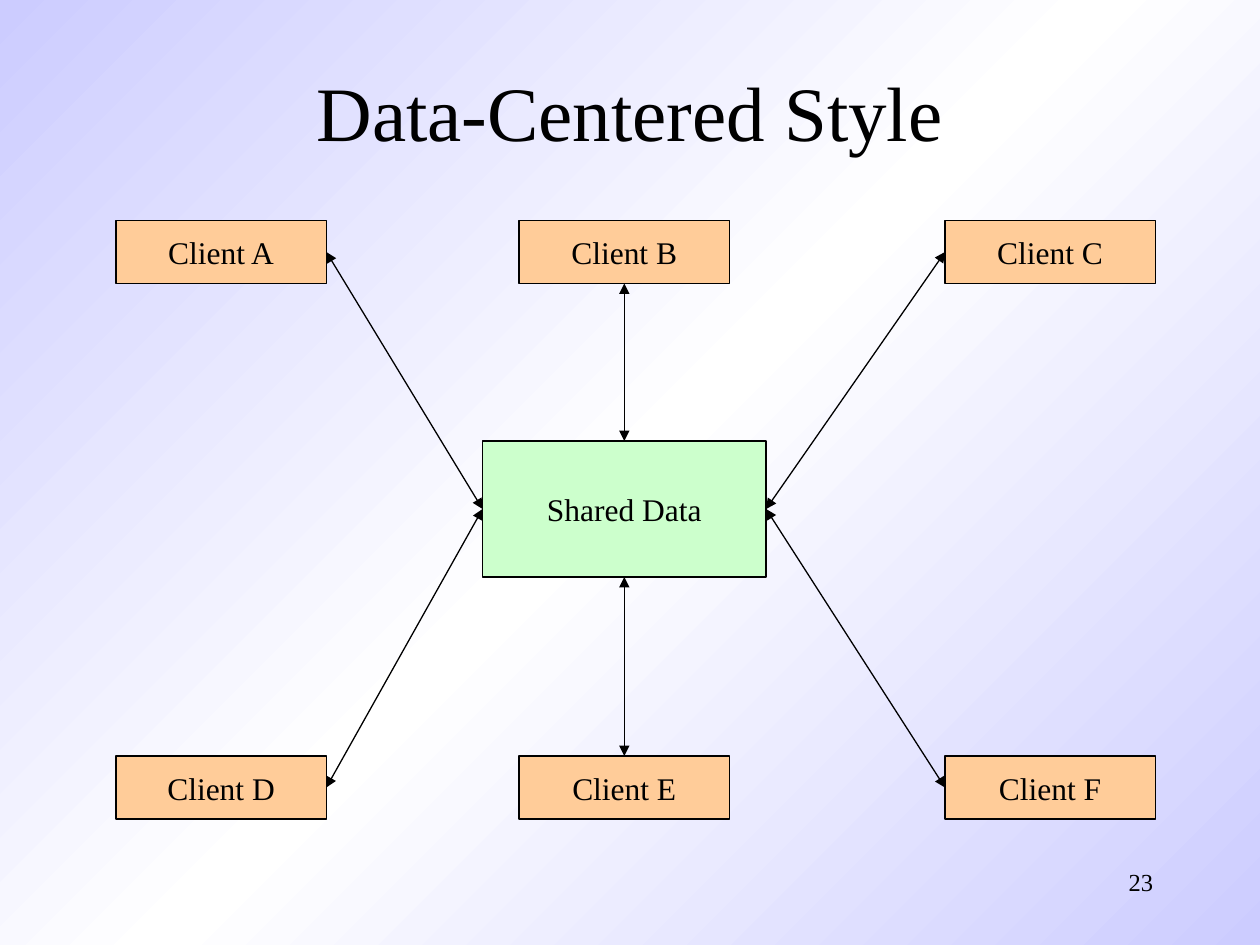
from copy import deepcopy

from lxml import etree
from pptx import Presentation
from pptx.dml.color import RGBColor
from pptx.enum import shapes, text
from pptx.oxml import ns
from pptx.util import Inches, Pt

FONT = "Times New Roman"
BLACK = RGBColor(0x00, 0x00, 0x00)
WHITE = RGBColor(0xFF, 0xFF, 0xFF)
LILAC = RGBColor(0xCC, 0xCC, 0xFF)
GREEN = RGBColor(0xCC, 0xFF, 0xCC)
ORANGE = RGBColor(0xFF, 0xCC, 0x99)

TOP, LEFT, BOTTOM, RIGHT = range(4)  # connection sites of a rectangle
COLUMNS = (0.92, 4.12, 7.5)
ROWS = (1.75, 6)
# Client: (its site, site of the shared data)
LINKS = {
    "A": (RIGHT, LEFT), "B": (BOTTOM, TOP), "C": (LEFT, RIGHT),
    "D": (RIGHT, LEFT), "E": (TOP, BOTTOM), "F": (LEFT, RIGHT),
}


def paint_background(slide):
    """Diagonal gradient: lilac, white, lilac."""
    fill = slide.background.fill
    fill.gradient()
    fill.gradient_angle = 315  # counter-clockwise, so it runs down to the right
    stop_list = slide.element.find(".//" + ns.qn("a:gsLst"))
    stop_list.insert(1, deepcopy(stop_list[0]))
    for stop, position, color in zip(fill.gradient_stops, (0, 0.5, 1), (LILAC, WHITE, LILAC)):
        stop.position = position
        stop.color.rgb = color


def write(frame, words, size, align, anchor=text.MSO_ANCHOR.MIDDLE, wrap=True):
    frame.word_wrap = wrap
    frame.vertical_anchor = anchor
    para = frame.paragraphs[0]
    para.alignment = align
    span = para.add_run()
    span.text = words
    span.font.name = FONT
    span.font.size = Pt(size)
    span.font.color.rgb = BLACK


def set_title(slide, words):
    title = slide.shapes.title
    title.left, title.top = Inches(0.75), Inches(0.25)
    title.width, title.height = Inches(8.5), Inches(1.25)
    write(title.text_frame, words, 44, text.PP_ALIGN.CENTER)


def add_page_number(slide, number):
    box = slide.shapes.add_textbox(Inches(7.17), Inches(6.83), Inches(2.08), Inches(0.5))
    write(box.text_frame, number, 14, text.PP_ALIGN.RIGHT, text.MSO_ANCHOR.TOP)


def add_box(slide, words, left, top, width, height, color):
    box = slide.shapes.add_shape(
        shapes.MSO_SHAPE.RECTANGLE, Inches(left), Inches(top), Inches(width), Inches(height))
    box.shadow.inherit = False
    box.fill.solid()
    box.fill.fore_color.rgb = color
    box.line.color.rgb = BLACK
    box.line.width = Pt(0.75)
    write(box.text_frame, words, 18, text.PP_ALIGN.CENTER, wrap=False)
    return box


def add_double_arrow(slide, start, start_site, end, end_site):
    arrow = slide.shapes.add_connector(shapes.MSO_CONNECTOR.STRAIGHT, 0, 0, 0, 0)
    arrow.begin_connect(start, start_site)
    arrow.end_connect(end, end_site)
    arrow.line.color.rgb = BLACK
    arrow.line.width = Pt(0.75)
    outline = arrow.line._get_or_add_ln()
    for tag in ("a:headEnd", "a:tailEnd"):
        etree.SubElement(outline, ns.qn(tag), type="triangle")
    etree.SubElement(arrow.element.spPr, ns.qn("a:effectLst"))


def main():
    deck = Presentation()
    deck.slide_width, deck.slide_height = Inches(10), Inches(7.5)
    page = deck.slides.add_slide(deck.slide_layouts[5])

    # Frame of the slide
    paint_background(page)
    add_page_number(page, "23")
    set_title(page, "Data-Centered Style")

    # Shared data with the clients around it
    shared = add_box(page, "Shared Data", 3.83, 3.5, 2.25, 1.08, GREEN)
    places = [(left, top) for top in ROWS for left in COLUMNS]
    clients = {
        name: add_box(page, f"Client {name}", left, top, 1.67, 0.5, ORANGE)
        for name, (left, top) in zip(LINKS, places)
    }

    # Two-way links
    for name, (client_site, shared_site) in LINKS.items():
        add_double_arrow(page, clients[name], client_site, shared, shared_site)

    deck.save("out.pptx")


if __name__ == "__main__":
    main()
